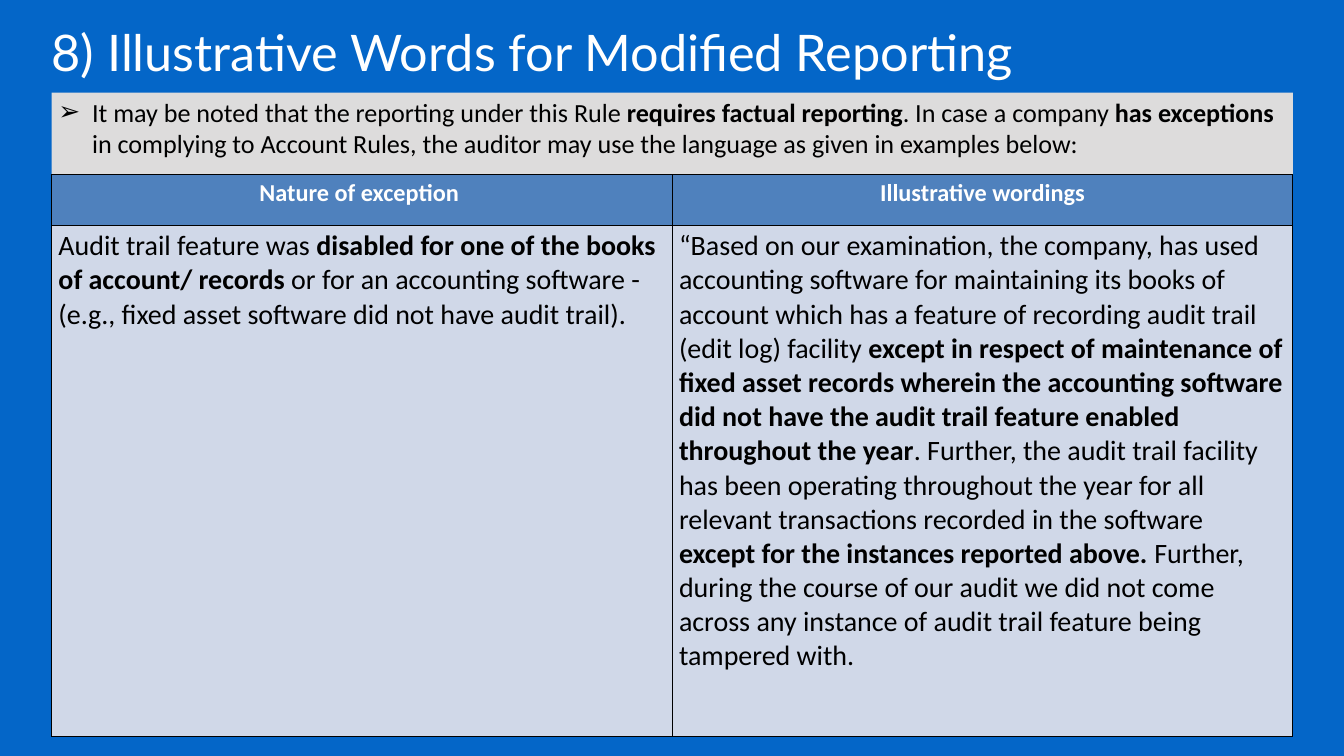
"""Build the slide on illustrative words for modified reporting."""
from dataclasses import dataclass

from lxml.etree import SubElement
from pptx import Presentation
from pptx.dml.color import RGBColor
from pptx.enum.text import MSO_ANCHOR, MSO_AUTO_SIZE, PP_ALIGN
from pptx.oxml import parse_xml
from pptx.oxml.ns import nsdecls, qn
from pptx.util import Inches, Pt

LEFT, WIDTH = 0.77, 18.47
ROW_HEIGHTS = (0.76, 7.6)
BLACK, WHITE = "000000", "FFFFFF"


@dataclass(frozen=True)
class Phrase:
    text: str
    bold: bool = False


@dataclass(frozen=True)
class TextStyle:
    size: float
    color: str
    font: str = "Calibri"
    alignment: PP_ALIGN = PP_ALIGN.LEFT


TITLE_STYLE = TextStyle(54, WHITE, "Lato")
NOTE_STYLE = TextStyle(28, BLACK)
ROW_STYLES = (TextStyle(26, WHITE, alignment=PP_ALIGN.CENTER), TextStyle(30, BLACK))
ROW_FILLS = ("4F81BD", "D0D8E8")

TITLE = [Phrase("8) Illustrative Words for Modified Reporting")]
NOTE = [
    Phrase("It may be noted that the reporting under this Rule "),
    Phrase("requires factual reporting", True),
    Phrase(". In case a company "),
    Phrase("has exceptions ", True),
    Phrase("in complying to Account Rules, the auditor may use the language as given in examples below:"),
]
TABLE_ROWS = [
    [
        [Phrase("Nature of exception ", True)],
        [Phrase("Illustrative wordings", True)],
    ],
    [
        [
            Phrase("Audit trail feature was "),
            Phrase("disabled for one of the books of account/ records ", True),
            Phrase("or for an accounting software - (e.g., fixed asset software did not have audit trail)."),
        ],
        [
            Phrase("“Based on our examination, the company, has used accounting software for maintaining "
                   "its books of account which has a feature of recording audit trail (edit log) facility "),
            Phrase("except in respect of maintenance of fixed asset records wherein the accounting "
                   "software did not have the audit trail feature enabled throughout the year", True),
            Phrase(". Further, the audit trail facility has been operating throughout the year for all "
                   "relevant transactions recorded in the software "),
            Phrase("except for the instances reported above. ", True),
            Phrase("Further, during the course of our audit we did not come across any instance of "
                   "audit trail feature being tampered with."),
        ],
    ],
]


def rgb(color: str) -> RGBColor:
    return RGBColor.from_string(color)


def paint(fill, color: str) -> None:
    fill.solid()
    fill.fore_color.rgb = rgb(color)


def write(paragraph, phrases: list[Phrase], style: TextStyle) -> None:
    paragraph.alignment = style.alignment
    paragraph.space_before = Pt(0)
    for phrase in phrases:
        run = paragraph.add_run()
        run.text = phrase.text
        run.font.name = style.font
        run.font.size = Pt(style.size)
        run.font.bold = phrase.bold
        run.font.color.rgb = rgb(style.color)


def place(shape, top: float, width: float, height: float) -> None:
    shape.left, shape.top = Inches(LEFT), Inches(top)
    shape.width, shape.height = Inches(width), Inches(height)
    frame = shape.text_frame
    frame.word_wrap = True
    frame.auto_size = MSO_AUTO_SIZE.NONE
    frame.vertical_anchor = MSO_ANCHOR.TOP


def add_title(shape) -> None:
    place(shape, -0.03, 15.07, 1.14)
    frame = shape.text_frame
    frame.margin_left = frame.margin_top = frame.margin_right = frame.margin_bottom = 0
    paragraph = frame.paragraphs[0]
    write(paragraph, TITLE, TITLE_STYLE)
    paragraph.line_spacing = Pt(89.6)


def add_note(shape) -> None:
    place(shape, 1.38, WIDTH, 9.58)
    paint(shape.fill, "DDDCDC")
    paragraph = shape.text_frame.paragraphs[0]
    write(paragraph, NOTE, NOTE_STYLE)
    properties = paragraph._p.get_or_add_pPr()
    properties.set("marL", str(Inches(0.5)))
    properties.set("indent", str(-Inches(0.5)))
    SubElement(properties, qn("a:buFont")).set("typeface", "Arial")
    SubElement(properties, qn("a:buChar")).set("char", "➢")


def add_borders(cell) -> None:
    properties = cell._tc.get_or_add_tcPr()
    for position, side in enumerate(("lnL", "lnR", "lnT", "lnB")):
        properties.insert(position, parse_xml(
            f'<a:{side} {nsdecls("a")} w="{Pt(1)}"><a:solidFill>'
            f'<a:srgbClr val="{BLACK}"/></a:solidFill></a:{side}>'))


def add_wordings_table(slide) -> None:
    table = slide.shapes.add_table(
        len(TABLE_ROWS), len(TABLE_ROWS[0]), Inches(LEFT), Inches(2.6),
        Inches(WIDTH), Inches(sum(ROW_HEIGHTS))).table
    for row, height, contents, style, fill in zip(
            table.rows, ROW_HEIGHTS, TABLE_ROWS, ROW_STYLES, ROW_FILLS):
        row.height = Inches(height)
        for cell, phrases in zip(row.cells, contents):
            paint(cell.fill, fill)
            add_borders(cell)
            write(cell.text_frame.paragraphs[0], phrases, style)


def main() -> None:
    presentation = Presentation()
    presentation.slide_width, presentation.slide_height = Inches(20), Inches(11.25)
    slide = presentation.slides.add_slide(presentation.slide_layouts[1])
    paint(slide.background.fill, "0466C8")
    add_title(slide.shapes.title)
    add_note(slide.placeholders[1])
    add_wordings_table(slide)
    presentation.save("out.pptx")


if __name__ == "__main__":
    main()
